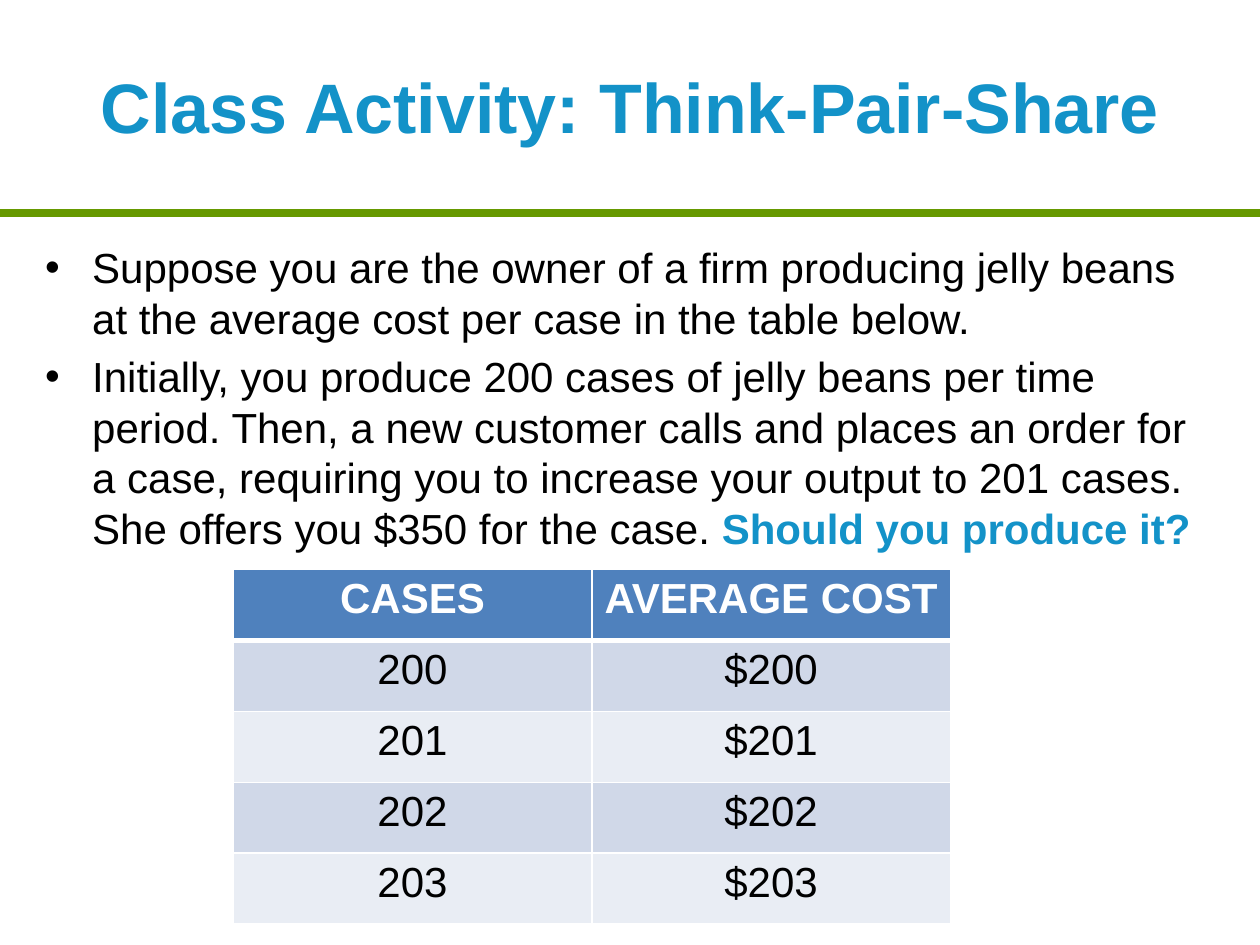
from dataclasses import dataclass

from lxml import etree
from pptx import Presentation
from pptx.dml.color import RGBColor
from pptx.enum.shapes import MSO_CONNECTOR
from pptx.enum.text import MSO_ANCHOR, PP_ALIGN
from pptx.oxml import parse_xml
from pptx.oxml.ns import nsdecls, qn
from pptx.util import Cm, Pt

CENTER, LEFT = PP_ALIGN.CENTER, PP_ALIGN.LEFT
MIDDLE = MSO_ANCHOR.MIDDLE
STRAIGHT = MSO_CONNECTOR.STRAIGHT


@dataclass(frozen=True)
class Theme:
    font: str = "Arial"
    title_size: int = 40
    body_size: int = 24
    accent: str = "1392C8"
    rule: str = "669900"
    text: str = "000000"
    white: str = "FFFFFF"
    header: str = "4F81BD"
    bands: tuple = ("D0D8E8", "E9EDF4")


T = Theme()


def add_text(p, text, size=T.body_size, color=T.text, bold=False, align=LEFT):
    p.alignment = align
    r = p.add_run()
    r.text = text
    r.font.name = T.font
    r.font.size = Pt(size)
    r.font.bold = bold
    r.font.color.rgb = RGBColor.from_string(color)


def add_border(cell, side, width):
    """Draw one white edge; call before the cell is filled."""
    cell._tc.get_or_add_tcPr().append(parse_xml(
        f'<a:{side} {nsdecls("a")} w="{Pt(width)}"><a:solidFill>'
        f'<a:srgbClr val="{T.white}"/></a:solidFill></a:{side}>'))


prs = Presentation()
prs.slide_width, prs.slide_height = Cm(25.4), Cm(19.05)
slide = prs.slides.add_slide(prs.slide_layouts[6])

# Green rule under the title
rule = slide.shapes.add_connector(STRAIGHT, Cm(0), Cm(4.29), Cm(25.4), Cm(4.29))
rule.line.color.rgb = RGBColor.from_string(T.rule)
rule.line.width = Pt(4.5)
etree.SubElement(rule._element.spPr, qn("a:effectLst"))

# Title
tf = slide.shapes.add_textbox(Cm(1.27), Cm(0), Cm(22.86), Cm(4.24)).text_frame
tf.word_wrap = True
tf.vertical_anchor = MIDDLE
add_text(tf.paragraphs[0], "Class Activity: Think-Pair-Share",
         size=T.title_size, color=T.accent, bold=True, align=CENTER)

# Bulleted scenario: each bullet is a list of (text, format) runs
bullets = [
    [("Suppose you are the owner of a firm producing jelly beans at the "
      "average cost per case in the table below.", {})],
    [("Initially, you produce 200 cases of jelly beans per time period. "
      "Then, a new customer calls and places an order for a case, requiring "
      "you to increase your output to 201 cases. She offers you $350 for "
      "the case. ", {}),
     ("Should you produce it?", {"color": T.accent, "bold": True})],
]
tf = slide.shapes.add_textbox(Cm(0.66), Cm(4.75), Cm(23.98), Cm(6.7)).text_frame
tf.word_wrap = True
for i, runs in enumerate(bullets):
    p = tf.add_paragraph() if i else tf.paragraphs[0]
    p.space_before = Pt(0.2 * T.body_size)
    for text, style in runs:
        add_text(p, text, **style)
    pPr = p._p.get_or_add_pPr()
    pPr.set("marL", str(Cm(0.95)))
    pPr.set("indent", str(-Cm(0.95)))
    etree.SubElement(pPr, qn("a:buFont"), typeface=T.font)
    etree.SubElement(pPr, qn("a:buChar"), char="•")

# Cost table
rows = [("CASES", "AVERAGE COST")] + [(str(n), f"${n}") for n in range(200, 204)]
table = slide.shapes.add_table(len(rows), 2, Cm(4.7), Cm(11.48),
                               Cm(14.46), Cm(7.15)).table
for i, row in enumerate(rows):
    is_header = i == 0
    fill = T.header if is_header else T.bands[(i - 1) % 2]
    for j, text in enumerate(row):
        cell = table.cell(i, j)
        add_border(cell, "lnL", 1)
        add_border(cell, "lnR", 1)
        add_border(cell, "lnT", 3 if i == 1 else 1)
        add_border(cell, "lnB", 3 if is_header else 1)
        cell.fill.solid()
        cell.fill.fore_color.rgb = RGBColor.from_string(fill)
        add_text(cell.text_frame.paragraphs[0], text, bold=is_header,
                 color=T.white if is_header else T.text, align=CENTER)

prs.save("out.pptx")
